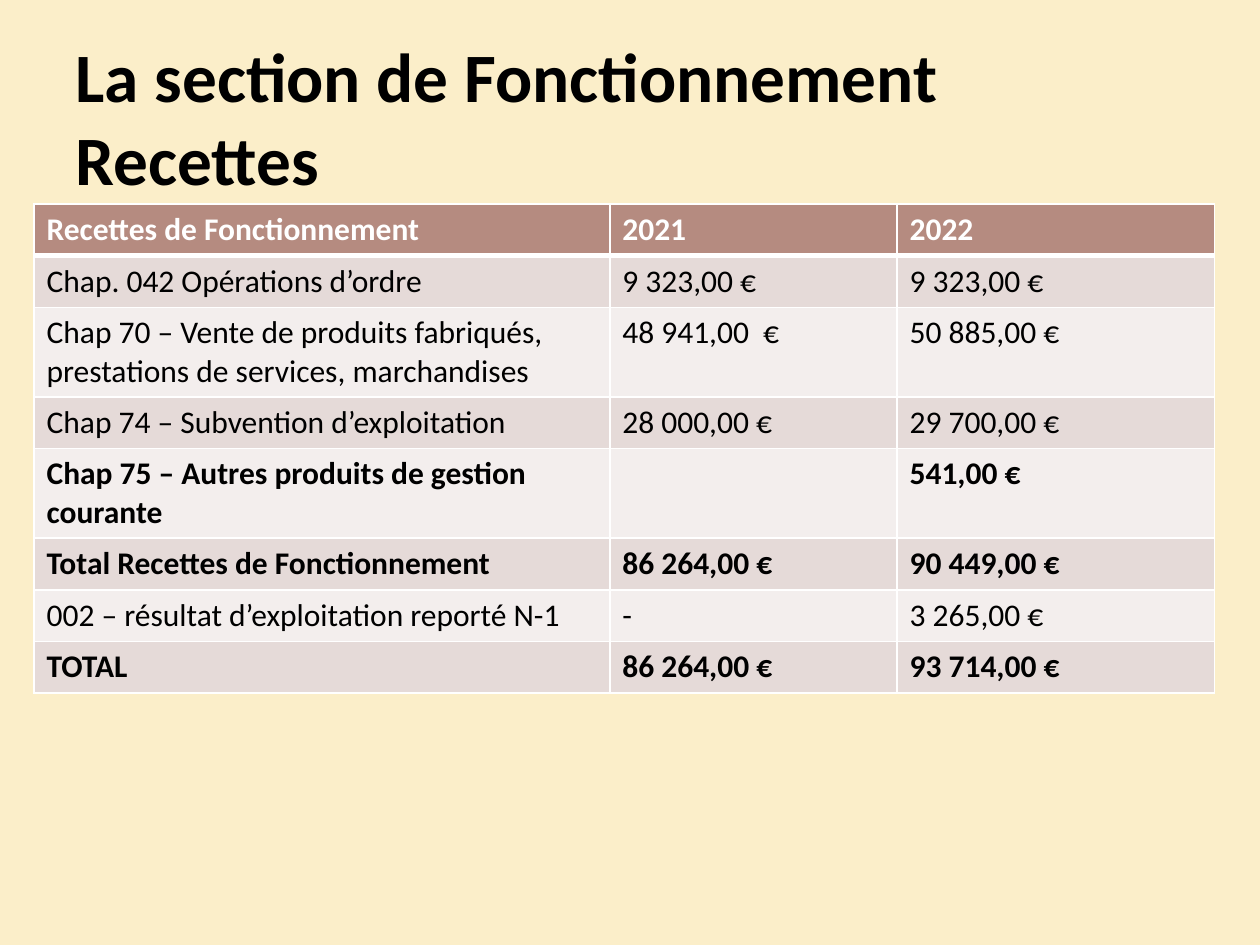
"""Build the operating revenue slide with its title and budget table."""
from lxml import etree
from pptx import Presentation
from pptx.dml.color import RGBColor
from pptx.enum.text import MSO_ANCHOR, PP_ALIGN
from pptx.oxml.ns import qn
from pptx.util import Inches, Pt

LEFT = PP_ALIGN.LEFT
MIDDLE = MSO_ANCHOR.MIDDLE
TITLE_ONLY = 5

CREAM = RGBColor(0xFB, 0xEE, 0xC9)
BLACK = RGBColor(0x00, 0x00, 0x00)
WHITE = RGBColor(0xFF, 0xFF, 0xFF)
HEADER = RGBColor(0xB5, 0x8B, 0x80)
BANDS = (RGBColor(0xF3, 0xEE, 0xED), RGBColor(0xE5, 0xDA, 0xD8))

TITLE_LINES = ("La section de Fonctionnement", "Recettes")
REVENUE_ROWS = (
    ("Recettes de Fonctionnement", "2021", "2022"),
    ("Chap. 042 Opérations d’ordre", "9 323,00 €", "9 323,00 €"),
    ("Chap 70 – Vente de produits fabriqués, prestations de services, marchandises",
     "48 941,00  €", "50 885,00 €"),
    ("Chap 74 – Subvention d’exploitation", "28 000,00 €", "29 700,00 €"),
    ("Chap 75 – Autres produits de gestion courante", "", "541,00 €"),
    ("Total Recettes de Fonctionnement", "86 264,00 €", "90 449,00 €"),
    ("002 – résultat d’exploitation reporté N-1", "-", "3 265,00 €"),
    ("TOTAL", "86 264,00 €", "93 714,00 €"),
)
BOLD_ROWS = {0, 4, 5, 7}
COLUMN_WIDTHS = (4.57, 2.28, 2.52)
ROW_HEIGHT = 0.41


class SlideBuilder:
    font_name = "Calibri"
    title_size = 39.6
    body_size = 18

    def __init__(self, slide):
        self.slide = slide

    def background(self, color):
        fill = self.slide.background.fill
        fill.solid()
        fill.fore_color.rgb = color

    def run(self, paragraph, text, size, color, bold):
        run = paragraph.add_run()
        run.text = text
        run.font.name = self.font_name
        run.font.size = Pt(size)
        run.font.bold = bold
        run.font.color.rgb = color

    def title(self, lines, left, top, width, height):
        shape = self.slide.shapes.title
        shape.left, shape.top = Inches(left), Inches(top)
        shape.width, shape.height = Inches(width), Inches(height)
        shape.text_frame.vertical_anchor = MIDDLE
        paragraph = shape.text_frame.paragraphs[0]
        paragraph.alignment = LEFT
        for index, line in enumerate(lines):
            if index:
                paragraph.add_line_break()
            self.run(paragraph, line, self.title_size, BLACK, True)

    def borders(self, cell, color, widths):
        properties = cell._tc.get_or_add_tcPr()
        for index, (side, width) in enumerate(widths.items()):
            line = etree.Element(qn(f"a:ln{side}"), w=str(Pt(width)))
            fill = etree.SubElement(line, qn("a:solidFill"))
            etree.SubElement(fill, qn("a:srgbClr"), val=str(color))
            properties.insert(index, line)

    def table(self, rows, left, top, height):
        frame = self.slide.shapes.add_table(
            len(rows), len(COLUMN_WIDTHS), Inches(left), Inches(top),
            Inches(sum(COLUMN_WIDTHS)), Inches(ROW_HEIGHT * len(rows)))
        table = frame.table
        for column, width in zip(table.columns, COLUMN_WIDTHS):
            column.width = Inches(width)
        for row_index, texts in enumerate(rows):
            table.rows[row_index].height = Inches(ROW_HEIGHT)
            is_header = row_index == 0
            fill_color = HEADER if is_header else BANDS[row_index % 2]
            text_color = WHITE if is_header else BLACK
            widths = {"L": 1, "R": 1, "T": 3 if row_index == 1 else 1,
                      "B": 3 if is_header else 1}
            for column_index, text in enumerate(texts):
                cell = table.cell(row_index, column_index)
                cell.fill.solid()
                cell.fill.fore_color.rgb = fill_color
                self.borders(cell, WHITE, widths)
                paragraph = cell.text_frame.paragraphs[0]
                paragraph.font.size = Pt(self.body_size)
                if text:
                    self.run(paragraph, text, self.body_size, text_color,
                             row_index in BOLD_ROWS)
        frame.height = Inches(height)


def main():
    presentation = Presentation()
    presentation.slide_width = Inches(10)
    presentation.slide_height = Inches(7.5)
    slide = presentation.slides.add_slide(presentation.slide_layouts[TITLE_ONLY])
    builder = SlideBuilder(slide)
    builder.background(CREAM)
    builder.title(TITLE_LINES, 0.5, 0.3, 9, 1.25)
    builder.table(REVENUE_ROWS, 0.27, 1.62, 3.83)
    presentation.save("out.pptx")


if __name__ == "__main__":
    main()
